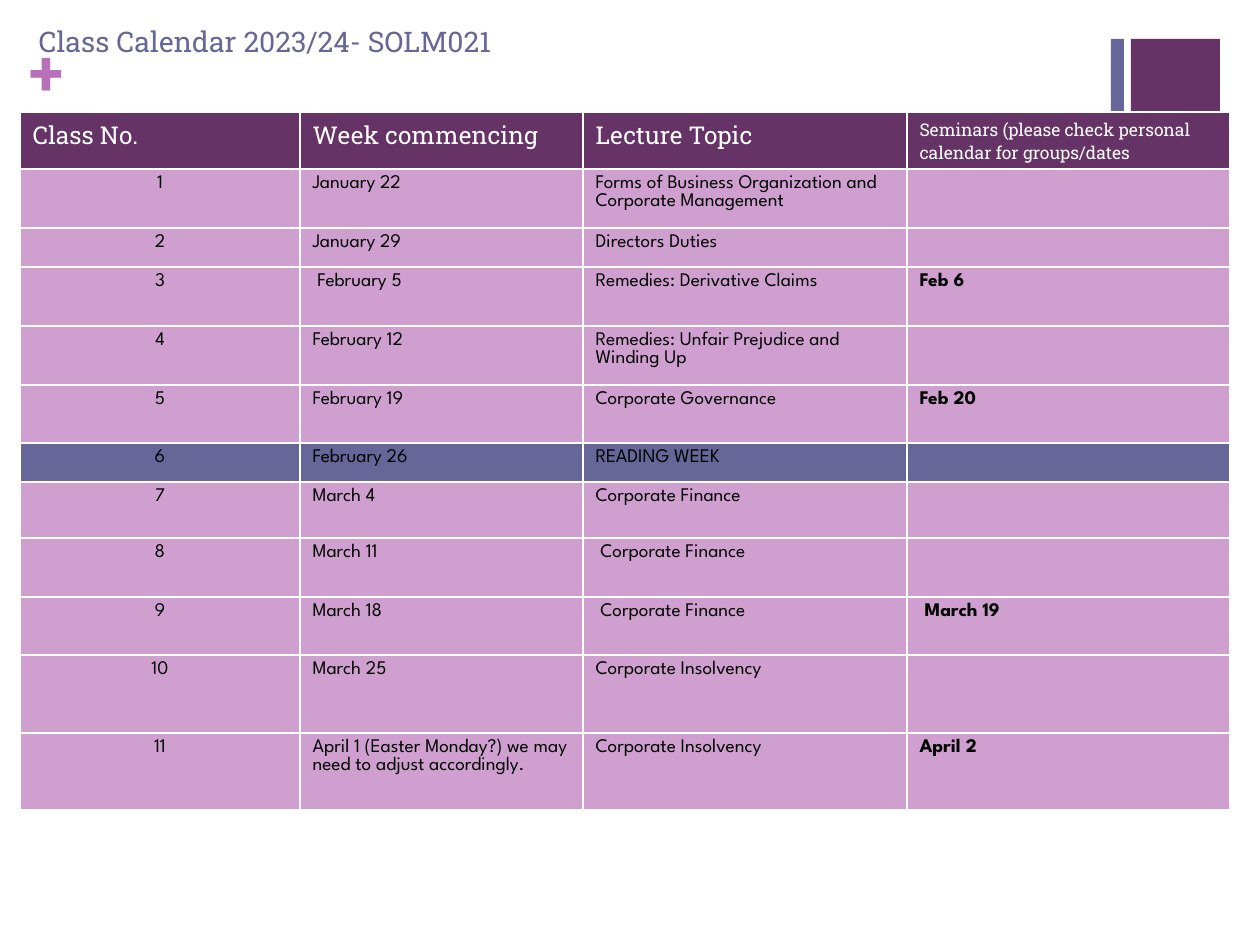
import dataclasses

import pptx
import pptx.dml.color
import pptx.enum.shapes
import pptx.enum.text
import pptx.oxml
import pptx.oxml.ns
import pptx.util

RGB = pptx.dml.color.RGBColor
ALIGN = pptx.enum.text.PP_ALIGN
ANCHOR = pptx.enum.text.MSO_ANCHOR

PX = 914400 // 126
WHITE = RGB(0xFF, 0xFF, 0xFF)
BLACK = RGB(0x00, 0x00, 0x00)
PLUM = RGB(0x66, 0x33, 0x66)
SLATE = RGB(0x66, 0x66, 0x99)
ORCHID = RGB(0xB8, 0x70, 0xB8)
LILAC = RGB(0xCF, 0xA0, 0xCF)
HEAD_FONT = "Roboto Slab"
BODY_FONT = "League Spartan"


@dataclasses.dataclass(frozen=True)
class Box:
    left: int
    top: int
    width: int
    height: int

    def emu(self) -> tuple[int, int, int, int]:
        return self.left * PX, self.top * PX, self.width * PX, self.height * PX


@dataclasses.dataclass(frozen=True)
class Style:
    font: str
    size: float
    color: RGB
    bold: bool = False


@dataclasses.dataclass(frozen=True)
class Week:
    date: str
    topic: str
    height: int
    seminar: str = ""
    fill: RGB = LILAC


TITLE = Style(HEAD_FONT, 16.2, SLATE)
PLUS = Style(HEAD_FONT, 36, ORCHID, True)
HEADER = Style(HEAD_FONT, 14, WHITE)
SMALL_HEADER = Style(HEAD_FONT, 10, WHITE)
BODY = Style(BODY_FONT, 11, BLACK)
SEMINAR = Style(BODY_FONT, 11, BLACK, True)

BARS = [(Box(1131, 39, 89, 220), PLUM), (Box(1111, 39, 13, 220), SLATE)]
COLUMNS = [280, 283, 324, 323]
HEADER_HEIGHT = 57
HEADINGS = [
    ("Class No.", HEADER),
    ("Week commencing", HEADER),
    ("Lecture Topic", HEADER),
    ("Seminars (please check personal calendar for groups/dates", SMALL_HEADER),
]
WEEKS = [
    Week("January 22", "Forms of Business Organization and Corporate Management", 59),
    Week("January 29", "Directors Duties", 39),
    Week(" February 5", "Remedies: Derivative Claims", 59, "Feb 6"),
    Week("February 12", "Remedies: Unfair Prejudice and Winding Up", 59),
    Week("February 19", "Corporate Governance", 58, "Feb 20"),
    Week("February 26", "READING WEEK", 39, fill=SLATE),
    Week("March 4", "Corporate Finance", 56),
    Week("March 11", " Corporate Finance", 59),
    Week("March 18", " Corporate Finance", 58, " March 19"),
    Week("March 25", "Corporate Insolvency", 78),
    Week("April 1 (Easter Monday?) we may need to adjust accordingly.",
         "Corporate Insolvency", 77, "April 2"),
]


def add_run(p, text: str, style: Style) -> None:
    r = p.add_run()
    r.text = text
    r.font.name = style.font
    r.font.size = pptx.util.Pt(style.size)
    r.font.bold = style.bold
    r.font.color.rgb = style.color


def set_title(slide, text: str, box: Box) -> None:
    sp = slide.shapes.title
    sp.left, sp.top, sp.width, sp.height = box.emu()
    tf = sp.text_frame
    tf.word_wrap = True
    tf.auto_size = pptx.enum.text.MSO_AUTO_SIZE.NONE
    tf.vertical_anchor = ANCHOR.MIDDLE
    p = tf.paragraphs[0]
    p.alignment = ALIGN.LEFT
    add_run(p, text, TITLE)


def add_bar(slide, box: Box, color: RGB) -> None:
    sp = slide.shapes.add_shape(pptx.enum.shapes.MSO_SHAPE.RECTANGLE, *box.emu())
    sp.shadow.inherit = False
    sp.fill.solid()
    sp.fill.fore_color.rgb = color
    sp.line.fill.background()


def add_plus(slide, box: Box) -> None:
    tf = slide.shapes.add_textbox(*box.emu()).text_frame
    tf.word_wrap = True
    tf.margin_left = tf.margin_top = tf.margin_right = tf.margin_bottom = 0
    tf.vertical_anchor = ANCHOR.MIDDLE
    add_run(tf.paragraphs[0], "+", PLUS)


def add_borders(cell) -> None:
    """Put white 1 pt lines before the cell's fill, as the schema orders them."""
    tc_pr = cell._tc.get_or_add_tcPr()
    for i, side in enumerate("LRTB"):
        tc_pr.insert(i, pptx.oxml.parse_xml(
            f'<a:ln{side} {pptx.oxml.ns.nsdecls("a")} w="12700"><a:solidFill>'
            f'<a:srgbClr val="{WHITE}"/></a:solidFill></a:ln{side}>'))


def fill_cell(cell, text: str, style: Style, fill: RGB, align=ALIGN.LEFT) -> None:
    cell.fill.solid()
    cell.fill.fore_color.rgb = fill
    add_borders(cell)
    p = cell.text_frame.paragraphs[0]
    p.alignment = align
    if text:
        add_run(p, text, style)
    else:
        # An empty cell still needs the small size, or its row grows.
        p._p.append(pptx.oxml.parse_xml(
            f'<a:endParaRPr {pptx.oxml.ns.nsdecls("a")} sz="{int(style.size * 100)}"/>'))


def add_calendar(slide, left: int, top: int) -> None:
    heights = [HEADER_HEIGHT] + [week.height for week in WEEKS]
    box = Box(left, top, sum(COLUMNS), sum(heights))
    table = slide.shapes.add_table(len(heights), len(COLUMNS), *box.emu()).table
    table.horz_banding = False
    for column, width in zip(table.columns, COLUMNS):
        column.width = width * PX
    for row, height in zip(table.rows, heights):
        row.height = height * PX
    for col, (text, style) in enumerate(HEADINGS):
        cell = table.cell(0, col)
        fill_cell(cell, text, style, PLUM)
        cell.margin_bottom = 4 * PX
    for number, week in enumerate(WEEKS, start=1):
        fill_cell(table.cell(number, 0), str(number), BODY, week.fill, ALIGN.CENTER)
        fill_cell(table.cell(number, 1), week.date, BODY, week.fill)
        fill_cell(table.cell(number, 2), week.topic, BODY, week.fill)
        fill_cell(table.cell(number, 3), week.seminar, SEMINAR, week.fill)


def main() -> None:
    prs = pptx.Presentation()
    prs.slide_width = 1260 * PX
    prs.slide_height = 945 * PX
    slide = prs.slides.add_slide(prs.slide_layouts[5])
    set_title(slide, "Class Calendar 2023/24- SOLM021", Box(26, 18, 1176, 46))
    for box, color in BARS:
        add_bar(slide, box, color)
    add_plus(slide, Box(30, 32, 37, 77))
    add_calendar(slide, 20, 112)
    prs.save("out.pptx")


if __name__ == "__main__":
    main()
